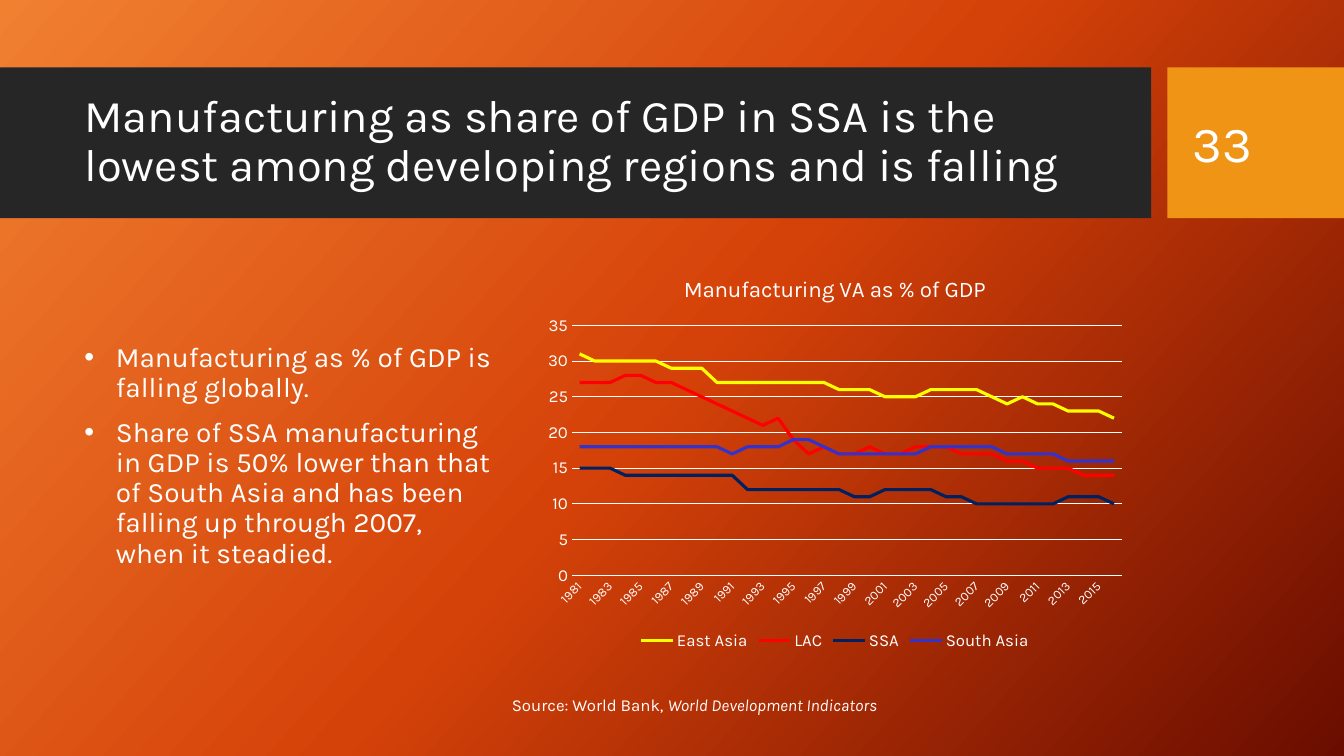
from copy import deepcopy

from lxml import etree
from pptx import Presentation
from pptx.chart.data import CategoryChartData
from pptx.dml.color import RGBColor
from pptx.enum.chart import XL_CHART_TYPE, XL_LEGEND_POSITION, XL_TICK_MARK
from pptx.enum.shapes import MSO_SHAPE
from pptx.enum.text import MSO_ANCHOR
from pptx.oxml import parse_xml
from pptx.oxml.ns import nsdecls, qn
from pptx.util import Cm, Pt

LINE = XL_CHART_TYPE.LINE
BOTTOM = XL_LEGEND_POSITION.BOTTOM
NO_TICK = XL_TICK_MARK.NONE
RECTANGLE = MSO_SHAPE.RECTANGLE
MIDDLE = MSO_ANCHOR.MIDDLE
TOP = MSO_ANCHOR.TOP

FONT = "Karla"
WHITE = "FFFFFF"
BACKGROUND_STOPS = [(0, "F18031"), (0.5, "D54209"), (1, "6A0D00")]
YEARS = range(1981, 2017)
REGIONS = [
    ("East Asia", "FFFF00",
     [31, 30, 30, 30, 30, 30, 29, 29, 29, 27, 27, 27, 27, 27, 27, 27, 27, 26,
      26, 26, 25, 25, 25, 26, 26, 26, 26, 25, 24, 25, 24, 24, 23, 23, 23, 22]),
    ("LAC", "FF0000",
     [27, 27, 27, 28, 28, 27, 27, 26, 25, 24, 23, 22, 21, 22, 19, 17, 18, 17,
      17, 18, 17, 17, 18, 18, 18, 17, 17, 17, 16, 16, 15, 15, 15, 14, 14, 14]),
    ("SSA", "002060",
     [15, 15, 15, 14, 14, 14, 14, 14, 14, 14, 14, 12, 12, 12, 12, 12, 12, 12,
      11, 11, 12, 12, 12, 12, 11, 11, 10, 10, 10, 10, 10, 10, 11, 11, 11, 10]),
    ("South Asia", "3333CC",
     [18, 18, 18, 18, 18, 18, 18, 18, 18, 18, 17, 18, 18, 18, 19, 19, 18, 17,
      17, 17, 17, 17, 17, 18, 18, 18, 18, 18, 17, 17, 17, 17, 16, 16, 16, 16]),
]
BULLETS = [
    "Manufacturing as % of GDP is falling globally.",
    "Share of SSA manufacturing in GDP is 50% lower than that of South Asia "
    "and has been falling up through 2007, when it steadied.",
]


def color(hex_string):
    """Turn a hex string into a colour."""
    return RGBColor.from_string(hex_string)


def style_font(font, size):
    """Apply the slide's typeface in white at the given size."""
    font.name = FONT
    font.size = Pt(size)
    font.bold = False
    font.color.rgb = color(WHITE)


def style_line(line, hex_string, width):
    """Give a line its colour and width."""
    line.color.rgb = color(hex_string)
    line.width = Pt(width)


def paint_background(slide):
    """Fill the background with the diagonal gradient."""
    fill = slide.background.fill
    fill.gradient()
    fill.gradient_angle = 318
    stop_list = next(slide.element.iter(qn("a:gsLst")))
    stop_list.append(deepcopy(stop_list[-1]))
    for stop, (position, hex_string) in zip(fill.gradient_stops, BACKGROUND_STOPS):
        stop.position = position
        stop.color.rgb = color(hex_string)


def add_block(slide, left, top, width, height, fill):
    """Add a plain filled rectangle."""
    block = slide.shapes.add_shape(RECTANGLE, left, top, width, height)
    block.shadow.inherit = False
    block.fill.solid()
    block.fill.fore_color.rgb = color(fill)
    block.line.fill.background()


def add_text(slide, left, top, width, height, lines, size, anchor=MIDDLE):
    """Add a wrapped text box with one paragraph per line and return its frame."""
    text_frame = slide.shapes.add_textbox(left, top, width, height).text_frame
    text_frame.word_wrap = True
    text_frame.vertical_anchor = anchor
    text_frame.text = "\n".join(lines)
    for paragraph in text_frame.paragraphs:
        for run in paragraph.runs:
            style_font(run.font, size)
    return text_frame


def add_header(slide, left, top, width, height):
    """Add the title band and the page number block."""
    number_width = Cm(4.45)
    number_left = left + width - number_width
    add_block(slide, left, top, number_left - Cm(0.41) - left, height, "262626")
    add_block(slide, number_left, top, number_width, height, "F09415")
    text_top, text_height = top + Cm(0.38), Cm(3)
    title = add_text(
        slide, left + Cm(1.88), text_top, Cm(26.7), text_height,
        ["Manufacturing as share of GDP in SSA is the lowest among developing "
         "regions and is falling"], 32.4)
    title.paragraphs[0].line_spacing = 0.9
    add_text(slide, number_left + Cm(0.38), text_top, Cm(3.2), text_height, ["33"], 36)


def add_bullets(slide, left, top, width, height):
    """Add the bulleted findings."""
    text_frame = add_text(slide, left, top, width, height, BULLETS, 20)
    for index, paragraph in enumerate(text_frame.paragraphs):
        paragraph.line_spacing = 0.9
        paragraph.space_before = Pt(10 if index else 0)
        properties = paragraph._p.get_or_add_pPr()
        properties.set("marL", str(Cm(0.79)))
        properties.set("indent", str(-Cm(0.79)))
        etree.SubElement(properties, qn("a:buFont")).set("typeface", "Arial")
        etree.SubElement(properties, qn("a:buChar")).set("char", "•")


def place_plot(chart, x, y, width, height):
    """Fix the inner plot area as fractions of the chart."""
    plot_area = next(chart.element.iter(qn("c:plotArea")))
    for old_layout in plot_area.findall(qn("c:layout")):
        plot_area.remove(old_layout)
    plot_area.insert(0, parse_xml(
        f'<c:layout {nsdecls("c")}><c:manualLayout><c:layoutTarget val="inner"/>'
        f'<c:xMode val="edge"/><c:yMode val="edge"/><c:x val="{x}"/><c:y val="{y}"/>'
        f'<c:w val="{width}"/><c:h val="{height}"/></c:manualLayout></c:layout>'))


def add_share_chart(slide, left, top, width, height):
    """Add the line chart of manufacturing shares by region."""
    data = CategoryChartData()
    data.categories = [str(year) for year in YEARS]
    for name, _, shares in REGIONS:
        data.add_series(name, shares)
    chart = slide.shapes.add_chart(LINE, left, top, width, height, data).chart
    style_font(chart.font, 10)
    chart.has_title = True
    title = chart.chart_title.text_frame
    title.text = "Manufacturing VA as % of GDP"
    style_font(title.paragraphs[0].runs[0].font, 16)
    chart.has_legend = True
    chart.legend.position = BOTTOM
    chart.legend.include_in_layout = False
    style_font(chart.legend.font, 12)

    plot = chart.plots[0]
    plot.vary_by_categories = False
    for series, (_, hex_string, _) in zip(plot.series, REGIONS):
        series.smooth = False
        style_line(series.format.line, hex_string, 2.25)

    years, shares = chart.category_axis, chart.value_axis
    for axis, size in ((years, 9), (shares, 12)):
        axis.major_tick_mark = axis.minor_tick_mark = NO_TICK
        style_font(axis.tick_labels.font, size)
    style_line(years.format.line, WHITE, 0.75)
    years_element = years._element
    next(years_element.iter(qn("a:bodyPr"))).set("rot", "-2700000")
    years_element.find(qn("c:noMultiLvlLbl")).addprevious(
        parse_xml(f'<c:tickLblSkip {nsdecls("c")} val="2"/>'))
    shares.minimum_scale, shares.maximum_scale, shares.major_unit = 0, 35, 5
    shares.format.line.fill.background()
    shares.has_major_gridlines = True
    style_line(shares.major_gridlines.format.line, WHITE, 0.75)
    place_plot(chart, 0.06, 0.17, 0.92, 0.63)


def add_source(slide, left, top, width, height):
    """Add the source line with its publication in italics."""
    text_frame = add_text(slide, left, top, width, height,
                          ["Source: World Bank, "], 12, TOP)
    publication = text_frame.paragraphs[0].add_run()
    publication.text = "World Development Indicators"
    style_font(publication.font, 12)
    publication.font.italic = True


def main():
    """Build the slide and save it."""
    presentation = Presentation()
    presentation.slide_width, presentation.slide_height = Cm(33.87), Cm(19.05)
    slide = presentation.slides.add_slide(presentation.slide_layouts[6])
    paint_background(slide)
    add_header(slide, 0, Cm(1.7), presentation.slide_width, Cm(3.8))
    content_top, content_height = Cm(6.5), Cm(10)
    add_bullets(slide, Cm(1.88), content_top, Cm(10.77), content_height)
    add_share_chart(slide, Cm(13.51), content_top, Cm(15.06), content_height)
    add_source(slide, Cm(12.65), Cm(17.37), Cm(16.3), Cm(0.77))
    presentation.save("out.pptx")


if __name__ == "__main__":
    main()
